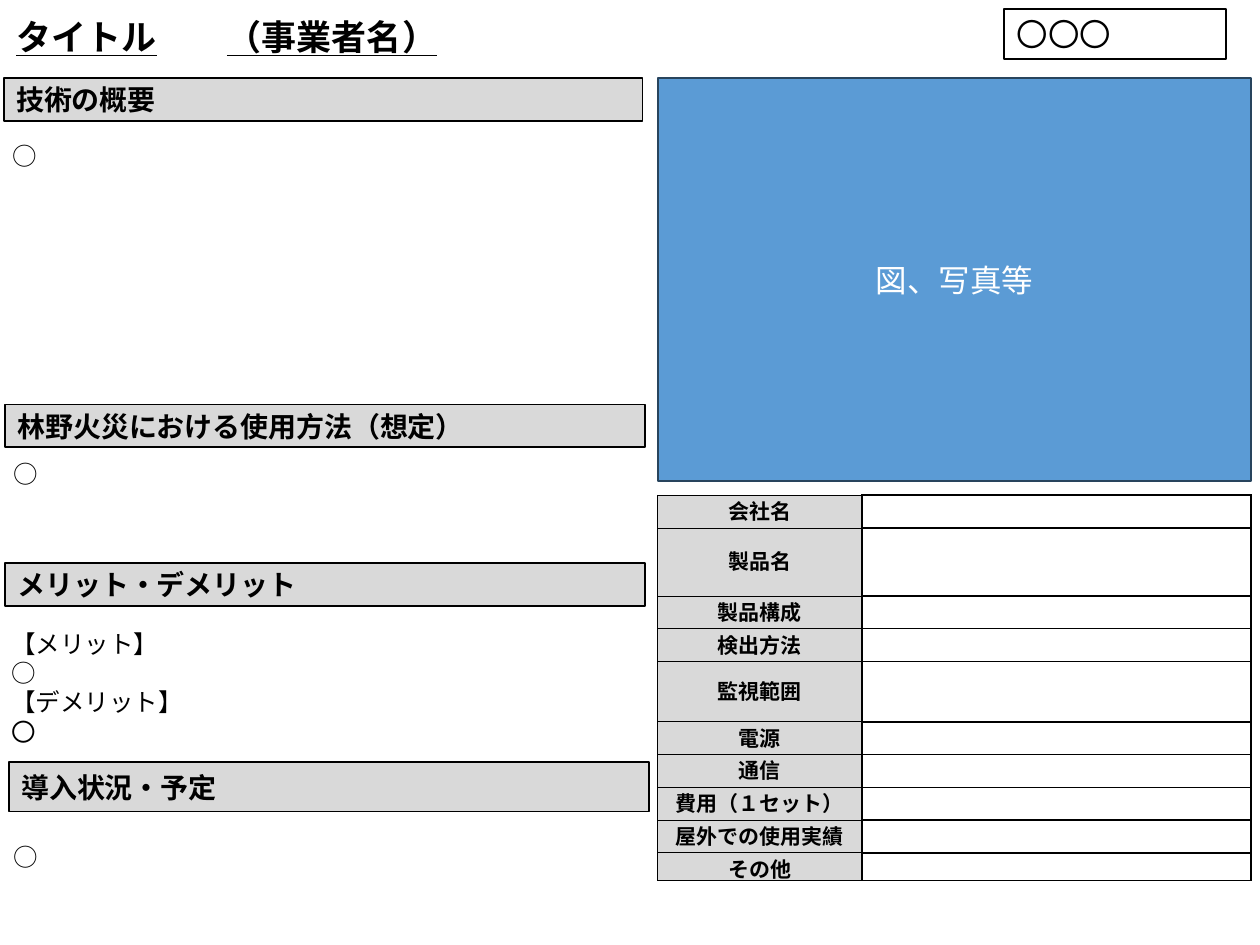
from lxml import etree
from pptx import Presentation
from pptx.dml.color import RGBColor
from pptx.enum import shapes, text
from pptx.oxml.ns import qn
from pptx.util import Emu, Inches, Pt

BLACK = RGBColor(0x00, 0x00, 0x00)
WHITE = RGBColor(0xFF, 0xFF, 0xFF)
GREY = RGBColor(0xD9, 0xD9, 0xD9)
BLUE = RGBColor(0x5B, 0x9B, 0xD5)
DARK_BLUE = RGBColor(0x28, 0x44, 0x5D)
JAPANESE = "Noto Sans CJK JP"
LATIN = "Calibri"

# Heading, its box, body lines, body box
SECTIONS = [
    ("技術の概要", (0.03, 0.62, 5.07, 0.34), ["○"], (0, 1.07, 2.53, 0.34)),
    ("林野火災における使用方法（想定）", (0.04, 3.21, 5.08, 0.34),
     ["○"], (0.01, 3.59, 2.54, 0.34)),
    ("メリット・デメリット", (0.04, 4.47, 5.08, 0.34),
     ["【メリット】", "○", "【デメリット】", "〇"], (-0.01, 4.94, 2.54, 1.04)),
    ("導入状況・予定", (0.07, 6.05, 5.08, 0.39), ["○"], (0.01, 6.63, 2.54, 0.34)),
]

# Row label and height
PRODUCT_ROWS = [
    ("会社名", 0.26), ("製品名", 0.54), ("製品構成", 0.26), ("検出方法", 0.26),
    ("監視範囲", 0.48), ("電源", 0.26), ("通信", 0.26), ("費用（１セット）", 0.26),
    ("屋外での使用実績", 0.26), ("その他", 0.22),
]


def inches(box):
    return [Inches(length) for length in box]


def style(para, size, bold=False, color=BLACK, name=JAPANESE,
          align=text.PP_ALIGN.LEFT):
    para.alignment = align
    font = para.font
    font.size = Pt(size)
    font.bold = bold
    font.color.rgb = color
    font.name = name
    defaults = para._p.pPr.find(qn("a:defRPr"))
    etree.SubElement(defaults, qn("a:ea"), typeface=JAPANESE)


def add_title(page, box):
    title = page.shapes.title
    title.left, title.top, title.width, title.height = inches(box)
    frame = title.text_frame
    frame.auto_size = text.MSO_AUTO_SIZE.NONE
    frame.vertical_anchor = text.MSO_ANCHOR.TOP
    para = frame.paragraphs[0]
    para.text = "タイトル\t（事業者名）"
    stops = etree.SubElement(para._p.get_or_add_pPr(), qn("a:tabLst"))
    etree.SubElement(stops, qn("a:tab"), pos=str(Inches(1.67)), algn="l")
    style(para, 20, bold=True)
    para.font.underline = True


def add_panel(page, box, label, fill, line, anchor=text.MSO_ANCHOR.MIDDLE, **look):
    panel = page.shapes.add_shape(shapes.MSO_SHAPE.RECTANGLE, *inches(box))
    panel.shadow.inherit = False
    panel.fill.solid()
    panel.fill.fore_color.rgb = fill
    panel.line.color.rgb = line
    panel.line.width = Pt(1)
    frame = panel.text_frame
    frame.vertical_anchor = anchor
    frame.text = label
    style(frame.paragraphs[0], **look)


def add_section(page, heading, heading_box, lines, body_box):
    add_panel(page, heading_box, heading, GREY, BLACK, size=16, bold=True)
    body = page.shapes.add_textbox(*inches(body_box))
    body.text_frame.word_wrap = True
    body.text_frame.text = "\n".join(lines)
    for para in body.text_frame.paragraphs:
        style(para, 14)


def set_borders(cell, width):
    properties = cell._tc.get_or_add_tcPr()
    for index, side in enumerate(("lnL", "lnR", "lnT", "lnB")):
        line = etree.Element(qn(f"a:{side}"), w=str(Pt(width)))
        fill = etree.SubElement(line, qn("a:solidFill"))
        etree.SubElement(fill, qn("a:srgbClr"), val=str(BLACK))
        properties.insert(index, line)


def format_cell(cell, label, fill, border):
    cell.margin_left = cell.margin_right = cell.margin_top = Emu(0)
    cell.margin_bottom = Inches(0.02)
    cell.vertical_anchor = text.MSO_ANCHOR.MIDDLE
    cell.fill.solid()
    cell.fill.fore_color.rgb = fill
    set_borders(cell, border)
    para = cell.text_frame.paragraphs[0]
    if label:
        para.text = label
    style(para, 12, bold=True, align=text.PP_ALIGN.CENTER)
    if not label:  # keeps an empty row from growing
        etree.SubElement(para._p, qn("a:endParaRPr"), sz="1200")


def add_product_table(page, box):
    table = page.shapes.add_table(len(PRODUCT_ROWS), 2, *inches(box)).table
    table.first_row = table.horz_banding = False
    table.columns[0].width = Inches(1.62)
    table.columns[1].width = Inches(3.09)
    for index, (label, height) in enumerate(PRODUCT_ROWS):
        table.rows[index].height = Inches(height)
        format_cell(table.cell(index, 0), label, GREY, 0.5)
        format_cell(table.cell(index, 1), "", WHITE, 1)


def main():
    deck = Presentation()
    deck.slide_width, deck.slide_height = Inches(10), Inches(7.5)
    page = deck.slides.add_slide(deck.slide_layouts[5])

    add_title(page, (0.03, 0.07, 9.95, 0.44))
    # Left column
    for section in SECTIONS:
        add_section(page, *section)
    # Right column
    add_product_table(page, (5.22, 3.93, 4.71, 3.07))
    add_panel(page, (5.22, 0.62, 4.71, 3.2), "図、写真等", BLUE, DARK_BLUE,
              size=18, color=WHITE, name=LATIN, align=text.PP_ALIGN.CENTER)
    # Category tag
    add_panel(page, (7.97, 0.07, 1.76, 0.4), "〇〇〇", WHITE, BLACK,
              anchor=text.MSO_ANCHOR.TOP, size=18, name=LATIN)
    deck.save("out.pptx")


if __name__ == "__main__":
    main()
